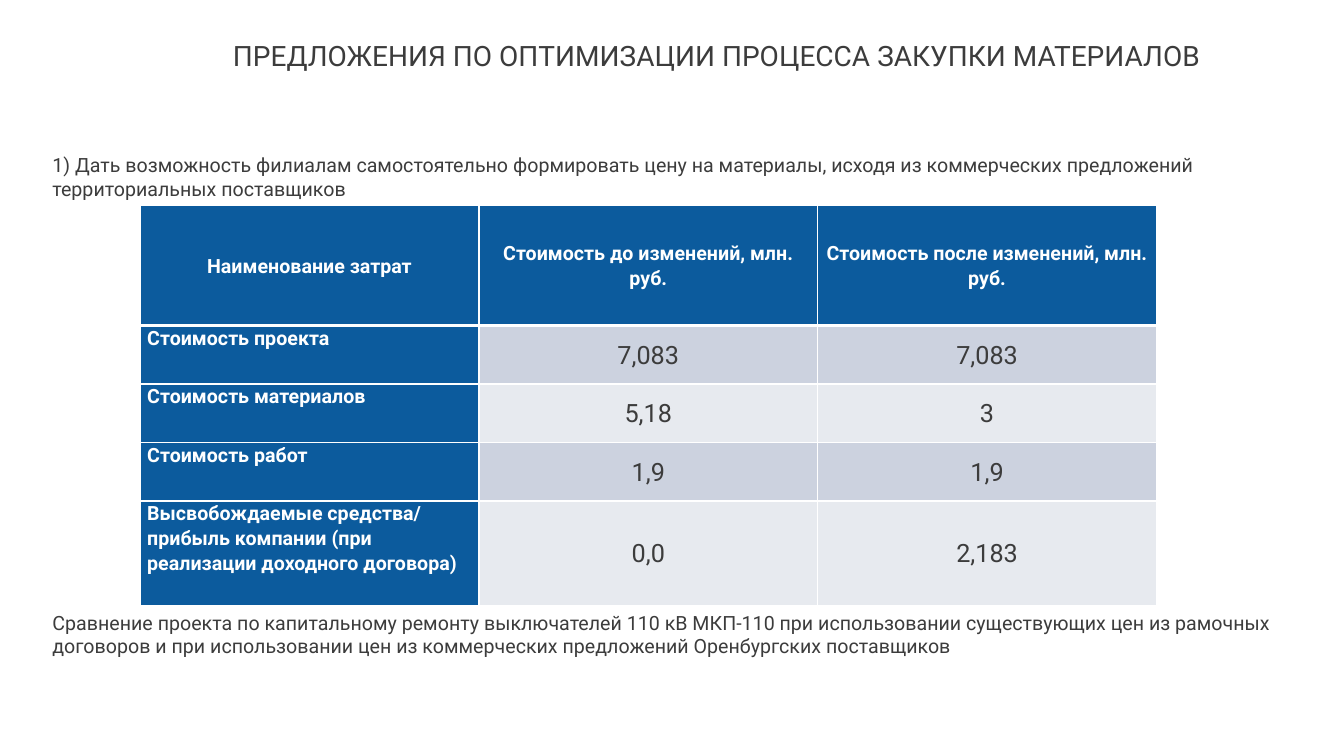
from lxml import etree
from pptx import Presentation
from pptx.dml.color import RGBColor
from pptx.enum import text as t
from pptx.oxml.ns import qn
from pptx.util import Inches, Pt

FONT = "Roboto"
WHITE, INK, BLUE = "FFFFFF", "3C3C3C", "0C5B9D"
BANDS = ["CCD2DF", "E7EAEF"]

TITLE = "ПРЕДЛОЖЕНИЯ ПО ОПТИМИЗАЦИИ ПРОЦЕССА ЗАКУПКИ МАТЕРИАЛОВ"
PROPOSAL = ("1) Дать возможность филиалам самостоятельно формировать цену на материалы, "
            "исходя из коммерческих предложений территориальных поставщиков")
COMPARISON = ("Сравнение проекта по капитальному ремонту выключателей 110 кВ МКП-110 "
              "при использовании существующих цен из рамочных договоров и при использовании "
              "цен из коммерческих предложений Оренбургских поставщиков")
COSTS = [
    ["Наименование затрат", "Стоимость до изменений, млн. руб.",
     "Стоимость после изменений, млн. руб."],
    ["Стоимость проекта", "7,083", "7,083"],
    ["Стоимость материалов", "5,18", "3"],
    ["Стоимость работ", "1,9", "1,9"],
    ["Высвобождаемые средства/ прибыль компании (при реализации доходного договора)",
     "0,0", "2,183"],
]
ROW_HEIGHTS = [1.19, 0.58, 0.58, 0.58, 1.04]


def rgb(value):
    return RGBColor.from_string(value)


def write(frame, wording, size, color=INK, bold=False, spacing=None,
          align=t.PP_ALIGN.LEFT):
    frame.text = wording
    frame.word_wrap = True
    paragraph = frame.paragraphs[0]
    paragraph.alignment = align
    if spacing:
        paragraph.line_spacing = spacing
    font = paragraph.runs[0].font
    font.name, font.size, font.bold = FONT, Pt(size), bold
    font.color.rgb = rgb(color)


def add_title(slide, left, top, width, height):
    title = slide.shapes.title
    title.left, title.top = Inches(left), Inches(top)
    title.width, title.height = Inches(width), Inches(height)
    frame = title.text_frame
    frame.margin_left = frame.margin_right = frame.margin_top = frame.margin_bottom = 0
    frame.vertical_anchor = t.MSO_ANCHOR.TOP
    frame.auto_size = t.MSO_AUTO_SIZE.NONE
    write(frame, TITLE, 20, spacing=0.9)


def add_note(slide, wording, left, top, width, height):
    note = slide.shapes.add_textbox(Inches(left), Inches(top), Inches(width), Inches(height))
    frame = note.text_frame
    frame.margin_left = frame.margin_right = 0
    frame.auto_size = t.MSO_AUTO_SIZE.SHAPE_TO_FIT_TEXT
    write(frame, wording, 14)


def add_borders(cell, top, bottom):
    """Draw white cell borders; top and bottom are widths in points."""
    properties = cell._tc.get_or_add_tcPr()
    for side, width in (("L", 1), ("R", 1), ("T", top), ("B", bottom)):
        line = etree.SubElement(properties, qn(f"a:ln{side}"), w=str(Pt(width)))
        fill = etree.SubElement(line, qn("a:solidFill"))
        etree.SubElement(fill, qn("a:srgbClr"), val=WHITE)


def format_cost_cell(cell, wording, row, column):
    is_header, is_value = row == 0, row > 0 and column > 0
    add_borders(cell, 3 if row == 1 else 1, 3 if is_header else 1)
    cell.fill.solid()
    cell.fill.fore_color.rgb = rgb(BANDS[(row - 1) % 2] if is_value else BLUE)
    cell.margin_left = cell.margin_right = Inches(0.07)
    cell.margin_top = cell.margin_bottom = 0
    centred = is_header or is_value
    cell.vertical_anchor = t.MSO_ANCHOR.MIDDLE if centred else t.MSO_ANCHOR.TOP
    write(cell.text_frame, wording, 18 if is_value else 14, INK if is_value else WHITE,
          not is_value, 1.07, t.PP_ALIGN.CENTER if centred else t.PP_ALIGN.LEFT)


def add_cost_table(slide, left, top, width, height):
    rows, columns = len(COSTS), len(COSTS[0])
    table = slide.shapes.add_table(rows, columns, Inches(left), Inches(top),
                                   Inches(width), Inches(height)).table
    for column in table.columns:
        column.width = Inches(width / columns)
    for row, share in zip(table.rows, ROW_HEIGHTS):
        row.height = Inches(height * share / sum(ROW_HEIGHTS))
    for r, costs in enumerate(COSTS):
        for c, wording in enumerate(costs):
            format_cost_cell(table.cell(r, c), wording, r, c)


def main():
    deck = Presentation()
    deck.slide_width, deck.slide_height = Inches(13.33), Inches(7.5)
    slide = deck.slides.add_slide(deck.slide_layouts[5])
    add_title(slide, 2.31, 0.42, 10.38, 0.47)
    add_note(slide, PROPOSAL, 0.52, 1.47, 12.16, 0.57)
    add_cost_table(slide, 1.39, 2.04, 10.08, 3.97)
    add_note(slide, COMPARISON, 0.52, 6.01, 12.16, 0.57)
    deck.save("out.pptx")


if __name__ == "__main__":
    main()
